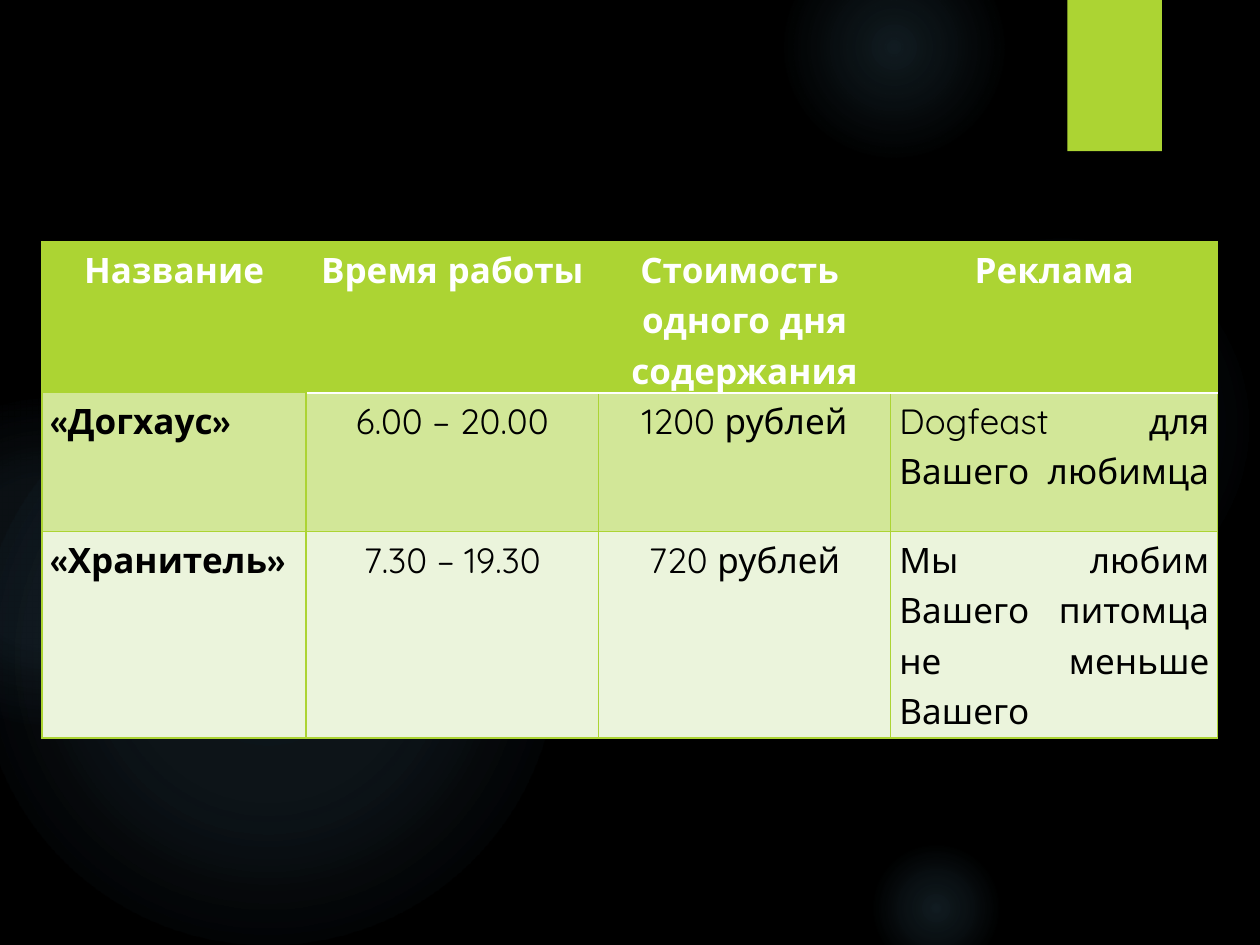
from lxml import etree
from pptx import Presentation
from pptx.dml.color import RGBColor
from pptx.enum.shapes import MSO_SHAPE
from pptx.enum.text import PP_ALIGN
from pptx.oxml import parse_xml
from pptx.oxml.ns import qn
from pptx.util import Pt

OVAL, RECTANGLE = MSO_SHAPE.OVAL, MSO_SHAPE.RECTANGLE
CENTER, JUSTIFY = PP_ALIGN.CENTER, PP_ALIGN.JUSTIFY
NAMESPACE = 'xmlns:a="http://schemas.openxmlformats.org/drawingml/2006/main"'
FONT = "Quicksand"
BLACK, WHITE, GREEN, GLOW = "000000", "FFFFFF", "ACD433", "7AC4F0"
ROW_FILLS = [GREEN, "D2E798", "EBF4DC"]
COLUMN_WIDTHS = [151, 167, 167, 187]
ROW_HEIGHTS = [86.4, 79.2, 118]
CELL_MARGINS = {
    "margin_left": Pt(5),
    "margin_right": Pt(5),
    "margin_top": Pt(0),
    "margin_bottom": Pt(0),
}
GLOWS = [
    (496, 132, 222, [(0, 7), (36, 6), (69, 0)]),
    (448, -36, 126, [(0, 14), (36, 7), (73, 0)]),
    (496, 480, 78, [(0, 14), (36, 7), (66, 0)]),
    (-12, 210, 330, [(0, 11), (36, 10), (75, 0)]),
    (-66, 228, 186, [(0, 8), (36, 8), (72, 0)]),
]
KENNELS = [
    ["Название", "Время работы", "Стоимость \nодного дня содержания", "Реклама"],
    ["«Догхаус»", "6.00 – 20.00", "1200 рублей", "Dogfeast для Вашего любимца "],
    ["«Хранитель»", "7.30 – 19.30", "720 рублей",
     "Мы любим Вашего питомца не меньше Вашего"],
]


def color(hex_value):
    """Turn a hex string into a colour."""
    return RGBColor.from_string(hex_value)


def paint(fill, hex_value):
    """Give a fill one solid colour."""
    fill.solid()
    fill.fore_color.rgb = color(hex_value)


def add_plain_shape(slide, kind, left, top, width, height):
    """Add a shape without outline or shadow."""
    shape = slide.shapes.add_shape(kind, Pt(left), Pt(top), Pt(width), Pt(height))
    shape.shadow.inherit = False
    shape.line.fill.background()
    return shape


def add_glow(slide, left, top, size, stops):
    """Add a circle that fades out from its centre."""
    glow = add_plain_shape(slide, OVAL, left, top, size, size)
    glow.fill.background()
    stop_xml = "".join(
        f'<a:gs pos="{position * 1000}"><a:srgbClr val="{GLOW}">'
        f'<a:alpha val="{opacity * 1000}"/></a:srgbClr></a:gs>'
        for position, opacity in stops
    )
    gradient = parse_xml(
        f'<a:gradFill {NAMESPACE} rotWithShape="1"><a:gsLst>{stop_xml}</a:gsLst>'
        '<a:path path="circle"><a:fillToRect l="50000" t="50000" r="50000" b="50000"/>'
        "</a:path></a:gradFill>"
    )
    properties = glow._element.spPr
    properties.replace(properties.find(qn("a:noFill")), gradient)


def add_bookmark(slide):
    """Add the green tab with its soft shadow at the top edge."""
    bookmark = add_plain_shape(slide, RECTANGLE, 610, 0, 54, 86.4)
    paint(bookmark.fill, GREEN)
    bookmark._element.spPr.find(qn("a:effectLst")).append(parse_xml(
        f'<a:outerShdw {NAMESPACE} blurRad="{Pt(3)}" dist="{Pt(2)}" dir="5400000" '
        f'rotWithShape="0"><a:srgbClr val="{BLACK}"><a:alpha val="45000"/></a:srgbClr>'
        "</a:outerShdw>"
    ))


def set_borders(cell, row, column):
    """Draw the grid, the thick name column edge and the white header rule."""
    thin, thick, rule = (GREEN, 0.75), (GREEN, 1.5), (WHITE, 1.5)
    borders = {"L": thin, "R": thin, "T": thin, "B": thin}
    if row and column < 2:
        borders["R" if column == 0 else "L"] = thick
    if column and row < 2:
        borders["B" if row == 0 else "T"] = rule
    properties = cell._tc.get_or_add_tcPr()
    for side, (hex_value, width) in borders.items():
        line = etree.SubElement(properties, qn(f"a:ln{side}"), w=str(Pt(width)))
        solid = etree.SubElement(line, qn("a:solidFill"))
        etree.SubElement(solid, qn("a:srgbClr"), val=hex_value)


def fill_cell(cell, text, row, column):
    """Write and format one table cell."""
    for attribute, value in CELL_MARGINS.items():
        setattr(cell, attribute, value)
    set_borders(cell, row, column)
    paint(cell.fill, ROW_FILLS[row])
    cell.text = text
    font_format = {"name": FONT, "size": Pt(20), "bold": row == 0 or column == 0}
    for paragraph in cell.text_frame.paragraphs:
        paragraph.alignment = JUSTIFY if row and column in (0, 3) else CENTER
        paragraph.line_spacing = 1.15
        font = paragraph.runs[0].font
        for attribute, value in font_format.items():
            setattr(font, attribute, value)
        font.color.rgb = color(BLACK if row else WHITE)


def add_kennel_table(slide):
    """Add the table that compares the kennels."""
    table = slide.shapes.add_table(
        len(ROW_HEIGHTS), len(COLUMN_WIDTHS), Pt(24), Pt(138),
        Pt(sum(COLUMN_WIDTHS)), Pt(sum(ROW_HEIGHTS)),
    ).table
    for column, width in zip(table.columns, COLUMN_WIDTHS):
        column.width = Pt(width)
    for row, height in zip(table.rows, ROW_HEIGHTS):
        row.height = Pt(height)
    for row, texts in enumerate(KENNELS):
        for column, text in enumerate(texts):
            fill_cell(table.cell(row, column), text, row, column)


def main():
    """Build and save the slide."""
    presentation = Presentation()
    presentation.slide_width, presentation.slide_height = Pt(720), Pt(540)
    slide = presentation.slides.add_slide(presentation.slide_layouts[6])
    paint(slide.background.fill, BLACK)
    for glow in GLOWS:
        add_glow(slide, *glow)
    add_bookmark(slide)
    add_kennel_table(slide)
    presentation.save("out.pptx")


if __name__ == "__main__":
    main()
